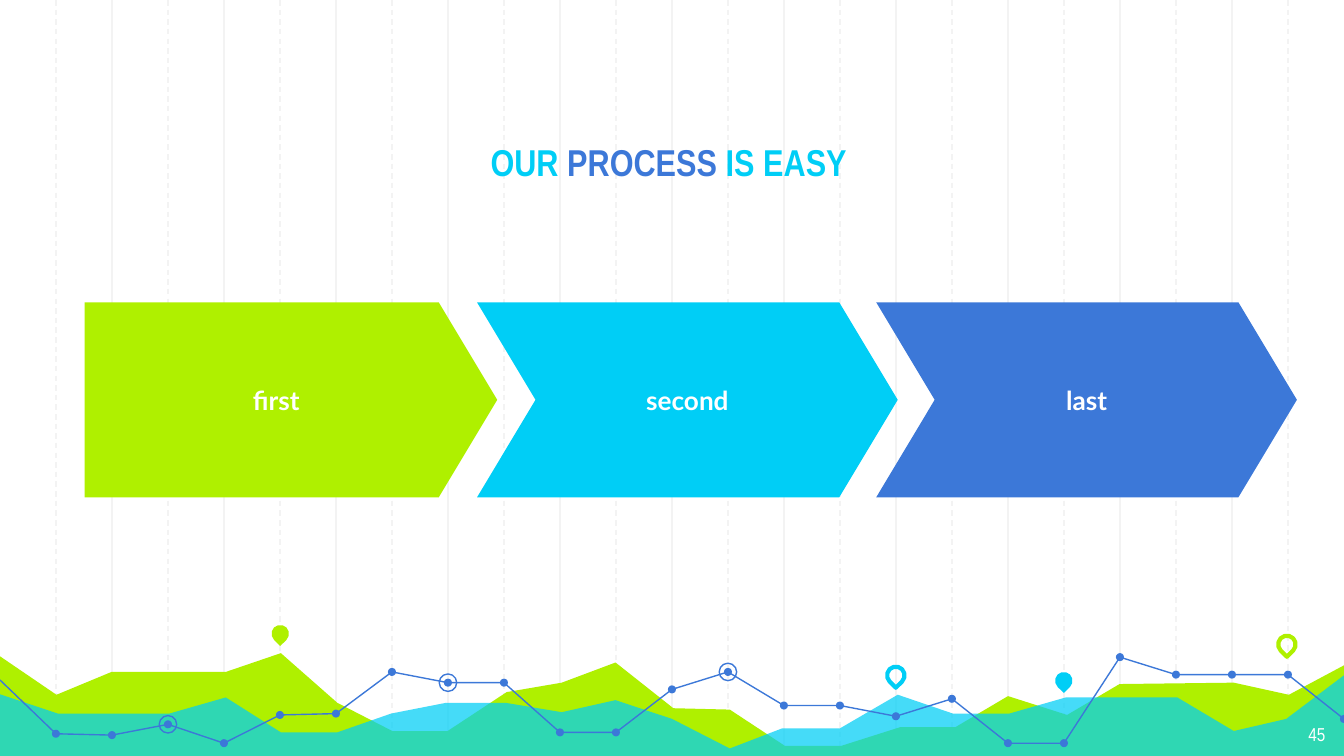
from lxml import etree
from pptx import Presentation
from pptx.dml.color import RGBColor
from pptx.enum.dml import MSO_LINE
from pptx.enum.shapes import MSO_CONNECTOR, MSO_SHAPE
from pptx.enum.text import MSO_ANCHOR, MSO_AUTO_SIZE, PP_ALIGN
from pptx.oxml.ns import qn
from pptx.util import Inches, Pt

DASH = MSO_LINE.DASH
STRAIGHT = MSO_CONNECTOR.STRAIGHT
OVAL, DROP = MSO_SHAPE.OVAL, MSO_SHAPE.TEAR
PLATE, CHEVRON = MSO_SHAPE.PENTAGON, MSO_SHAPE.CHEVRON
TOP, MIDDLE, BOTTOM = MSO_ANCHOR.TOP, MSO_ANCHOR.MIDDLE, MSO_ANCHOR.BOTTOM
CENTER, RIGHT = PP_ALIGN.CENTER, PP_ALIGN.RIGHT

WIDTH = 10
HEIGHT = WIDTH * 9 / 16
STEP = WIDTH / 24
LIME, CYAN, BLUE = "AFF000", "00CEF6", "3C78D8"
WHITE, GRAY = "FFFFFF", "F3F3F3"
HEAD, BODY = "Arial Narrow", "Lato"


def color(code):
    return RGBColor.from_string(code)


class Deck:
    def __init__(self):
        self.file = Presentation()
        self.file.slide_width = Inches(WIDTH)
        self.file.slide_height = Inches(HEIGHT)
        self.slide = self.file.slides.add_slide(self.file.slide_layouts[5])
        self.shapes = self.slide.shapes

    def paint(self, shape, fill=None, line=None, width=0.75, alpha=None):
        shape.shadow.inherit = False
        if fill:
            shape.fill.solid()
            shape.fill.fore_color.rgb = color(fill)
        else:
            shape.fill.background()
        if line:
            shape.line.color.rgb = color(line)
            shape.line.width = Pt(width)
        else:
            shape.line.fill.background()
        if alpha:
            tint = shape.element.spPr.find(".//" + qn("a:srgbClr"))
            etree.SubElement(tint, qn("a:alpha"), val=str(alpha * 1000))

    def rule(self, x, dash):
        line = self.shapes.add_connector(
            STRAIGHT, Inches(x), 0, Inches(x), Inches(5.65))
        line.line.color.rgb = color(GRAY)
        line.line.width = Pt(0.75)
        if dash:
            line.line.dash_style = DASH
        etree.SubElement(line.element.spPr, qn("a:effectLst"))

    def trace(self, points, close, **look):
        spots = [(Inches(x), Inches(y)) for x, y in points]
        pen = self.shapes.build_freeform(*spots[0], scale=1.0)
        pen.add_line_segments(spots[1:], close=close)
        self.paint(pen.convert_to_shape(), **look)

    def area(self, points, fill, alpha=None):
        floor = [(10.02, 5.65), (-0.03, 5.65)]
        self.trace(points + floor, True, fill=fill, alpha=alpha)

    def shape(self, kind, x, y, w, h, adjust=None, turn=0, **look):
        shape = self.shapes.add_shape(
            kind, Inches(x), Inches(y), Inches(w), Inches(h))
        if adjust is not None:
            shape.adjustments[0] = adjust
        shape.rotation = turn
        self.paint(shape, **look)
        return shape

    def disc(self, x, y, size, **look):
        self.shape(OVAL, x - size / 2, y - size / 2, size, size, **look)

    def pin(self, x, y, **look):
        self.shape(DROP, x, y, 0.13, 0.13, 1, 135, **look)

    def text(self, shape, runs, font, size, bold, align, anchor):
        frame = shape.text_frame
        frame.word_wrap = True
        frame.auto_size = MSO_AUTO_SIZE.NONE
        frame.vertical_anchor = anchor
        frame.margin_left = frame.margin_right = Inches(0.1)
        frame.margin_top = frame.margin_bottom = Inches(0.1)
        para = frame.paragraphs[0]
        para.alignment = align
        para.font.name, para.font.size, para.font.bold = font, Pt(size), bold
        for words, tone in runs:
            run = para.add_run()
            run.text = words
            run.font.color.rgb = color(tone)

    def title(self, x, y, w, h, runs):
        title = self.shapes.title
        title.left, title.top = Inches(x), Inches(y)
        title.width, title.height = Inches(w), Inches(h)
        self.text(title, runs, HEAD, 20, True, CENTER, BOTTOM)
        # Bring the title in front of the backdrop
        self.shapes.element.append(title.element)

    def label(self, x, y, w, h, words):
        box = self.shapes.add_textbox(
            Inches(x), Inches(y), Inches(w), Inches(h))
        self.text(box, [(words, WHITE)], HEAD, 10, False, RIGHT, TOP)


def main():
    deck = Deck()

    # Vertical grid, every other line dashed
    for i in range(1, 24):
        deck.rule(i * STEP, i % 2 == 1)

    # Hills
    deck.area([
        (-0.02, 4.87), (0.42, 5.17), (0.83, 5), (1.68, 5), (2.09, 4.86),
        (2.51, 5.23), (2.92, 5.44), (3.33, 5.44), (3.77, 5.15), (4.18, 5.08),
        (4.58, 4.93), (5.01, 5.27), (5.43, 5.28), (5.84, 5.55), (6.26, 5.55),
        (6.7, 5.41), (7.11, 5.41), (7.5, 5.18), (7.94, 5.32), (8.33, 5.09),
        (9.18, 5.08), (9.59, 5.17), (10.02, 4.94)], LIME)
    deck.area([
        (-0.02, 5.16), (0.43, 5.31), (1.26, 5.31), (1.68, 5.19), (2.09, 5.45),
        (2.51, 5.45), (2.91, 5.31), (3.32, 5.23), (3.76, 5.23), (4.18, 5.3),
        (4.58, 5.21), (5, 5.35), (5.43, 5.57), (5.82, 5.42), (6.25, 5.42),
        (6.68, 5.17), (7.09, 5.31), (7.51, 5.31), (7.93, 5.19), (8.76, 5.19),
        (9.18, 5.44), (9.57, 5.35), (10.02, 5.01)], CYAN, 73)

    # Pins
    deck.pin(2.02, 4.65, fill=LIME)
    deck.pin(6.6, 4.96, line=CYAN, width=2.25)
    deck.pin(7.85, 5, fill=CYAN)
    deck.pin(9.51, 4.73, line=LIME, width=2.25)

    # Line with a dot at each grid step and three rings
    levels = [5.06, 5.46, 5.47, 5.39, 5.53, 5.32, 5.31, 5, 5.08, 5.08, 5.45,
              5.45, 5.13, 5, 5.25, 5.25, 5.33, 5.2, 5.53, 5.53, 4.89, 5.02,
              5.02, 5.02, 5.35]
    points = [(i * STEP, y) for i, y in enumerate(levels)]
    deck.trace(points, False, line=BLUE)
    for x, y in points[1:]:
        deck.disc(x, y, 0.06, fill=BLUE)
    for i in (3, 8, 13):
        deck.disc(*points[i], 0.13, line=BLUE)

    # Title
    deck.title(1.15, 0.69, 7.65, 0.78,
               [("OUR ", CYAN), ("PROCESS", BLUE), (" IS EASY", CYAN)])

    # Process steps
    for kind, x, w, fill, words in (
            (PLATE, 0.63, 3.07, LIME, "first"),
            (CHEVRON, 3.55, 3.13, CYAN, "second"),
            (CHEVRON, 6.52, 3.13, BLUE, "last")):
        step = deck.shape(kind, x, 2.25, w, 1.45, 0.3, fill=fill)
        deck.text(step, [(words, WHITE)], BODY, 14, True, CENTER, MIDDLE)

    # Page number
    deck.label(9.36, 5.28, 0.6, 0.35, "45")

    deck.file.save("out.pptx")


if __name__ == "__main__":
    main()
